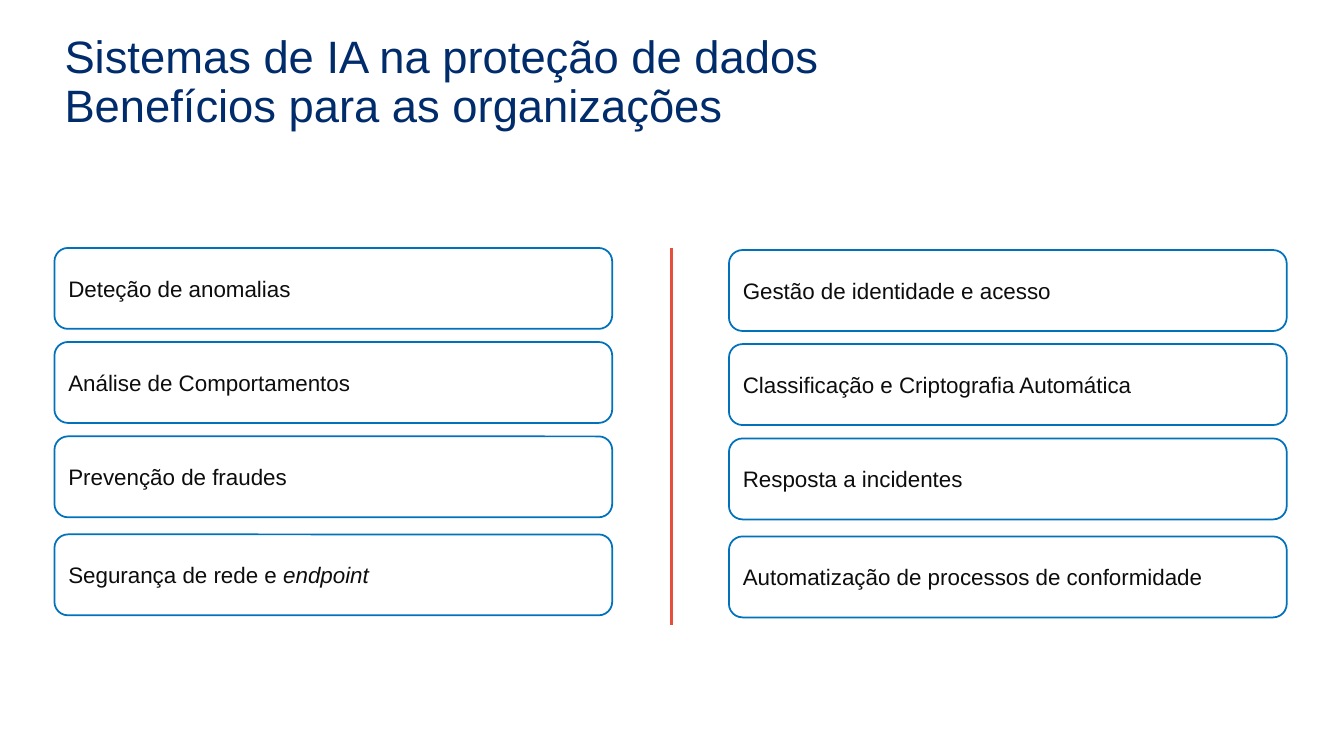
from dataclasses import dataclass

import lxml.etree
import pptx
import pptx.dml.color
import pptx.enum.shapes
import pptx.enum.text
import pptx.oxml.ns
import pptx.presentation
import pptx.slide
import pptx.text.text
import pptx.util

Pt = pptx.util.Pt
RGBColor = pptx.dml.color.RGBColor
MSO_ANCHOR = pptx.enum.text.MSO_ANCHOR
PP_ALIGN = pptx.enum.text.PP_ALIGN


@dataclass(frozen=True)
class Theme:
    font: str = "Arial"
    title_color: RGBColor = RGBColor(0x00, 0x2C, 0x6C)
    text_color: RGBColor = RGBColor(0x0D, 0x0D, 0x0D)
    border_color: RGBColor = RGBColor(0x00, 0x71, 0xBB)
    divider_color: RGBColor = RGBColor(0xE7, 0x4F, 0x3D)
    title_size: float = 32.4
    text_size: float = 16
    border_width: float = 1.25
    divider_width: float = 2.5


@dataclass(frozen=True)
class Benefit:
    text: str
    italic_ending: str = ""


@dataclass(frozen=True)
class Column:
    left: float
    top: float
    benefits: tuple[Benefit, ...]


THEME = Theme()
TITLE = "Sistemas de IA na proteção de dados\vBenefícios para as organizações"
CARD_WIDTH, CARD_HEIGHT = 398.4, 57.8
CARD_OFFSETS = (0, 67.2, 134.6, 204.6)
COLUMNS = (
    Column(38.9, 177.1, (
        Benefit("Deteção de anomalias"),
        Benefit("Análise de Comportamentos"),
        Benefit("Prevenção de fraudes"),
        Benefit("Segurança de rede e ", "endpoint"),
    )),
    Column(520.7, 178.6, (
        Benefit("Gestão de identidade e acesso"),
        Benefit("Classificação e Criptografia Automática"),
        Benefit("Resposta a incidentes"),
        Benefit("Automatização de processos de conformidade"),
    )),
)


def style_font(font: pptx.text.text.Font, size: float, color: RGBColor) -> None:
    font.name = THEME.font
    font.size = Pt(size)
    font.color.rgb = color


def add_title(slide: pptx.slide.Slide) -> None:
    title = slide.shapes.title
    title.left, title.top = Pt(38.9), Pt(27.4)
    title.width, title.height = Pt(798.5), Pt(70.6)
    frame = title.text_frame
    frame.text = TITLE
    frame.word_wrap = True
    frame.auto_size = pptx.enum.text.MSO_AUTO_SIZE.NONE
    frame.vertical_anchor = MSO_ANCHOR.BOTTOM
    paragraph = frame.paragraphs[0]
    paragraph.alignment = PP_ALIGN.LEFT
    paragraph.line_spacing = 0.9
    style_font(paragraph.font, THEME.title_size, THEME.title_color)
    for run in paragraph.runs:
        style_font(run.font, THEME.title_size, THEME.title_color)


def add_divider(slide: pptx.slide.Slide) -> None:
    x = Pt(479.5)
    divider = slide.shapes.add_connector(
        pptx.enum.shapes.MSO_CONNECTOR.STRAIGHT, x, Pt(177.1), x, Pt(446.4))
    divider.line.color.rgb = THEME.divider_color
    divider.line.width = Pt(THEME.divider_width)
    lxml.etree.SubElement(divider._element.spPr, pptx.oxml.ns.qn("a:effectLst"))


def add_card(slide: pptx.slide.Slide, benefit: Benefit, left: float, top: float) -> None:
    card = slide.shapes.add_shape(
        pptx.enum.shapes.MSO_SHAPE.ROUNDED_RECTANGLE,
        Pt(left), Pt(top), Pt(CARD_WIDTH), Pt(CARD_HEIGHT))
    card.shadow.inherit = False
    card.fill.background()
    card.line.color.rgb = THEME.border_color
    card.line.width = Pt(THEME.border_width)
    frame = card.text_frame
    frame.word_wrap = True
    frame.vertical_anchor = MSO_ANCHOR.MIDDLE
    paragraph = frame.paragraphs[0]
    paragraph.text = benefit.text
    paragraph.alignment = PP_ALIGN.LEFT
    if benefit.italic_ending:
        ending = paragraph.add_run()
        ending.text = benefit.italic_ending
        ending.font.italic = True
    for run in paragraph.runs:
        style_font(run.font, THEME.text_size, THEME.text_color)


def build() -> pptx.presentation.Presentation:
    presentation = pptx.Presentation()
    presentation.slide_width, presentation.slide_height = Pt(960), Pt(540)
    slide = presentation.slides.add_slide(presentation.slide_layouts.get_by_name("Title Only"))
    add_title(slide)
    add_divider(slide)
    for column in COLUMNS:
        for benefit, offset in zip(column.benefits, CARD_OFFSETS):
            add_card(slide, benefit, column.left, column.top + offset)
    return presentation


if __name__ == "__main__":
    build().save("out.pptx")
